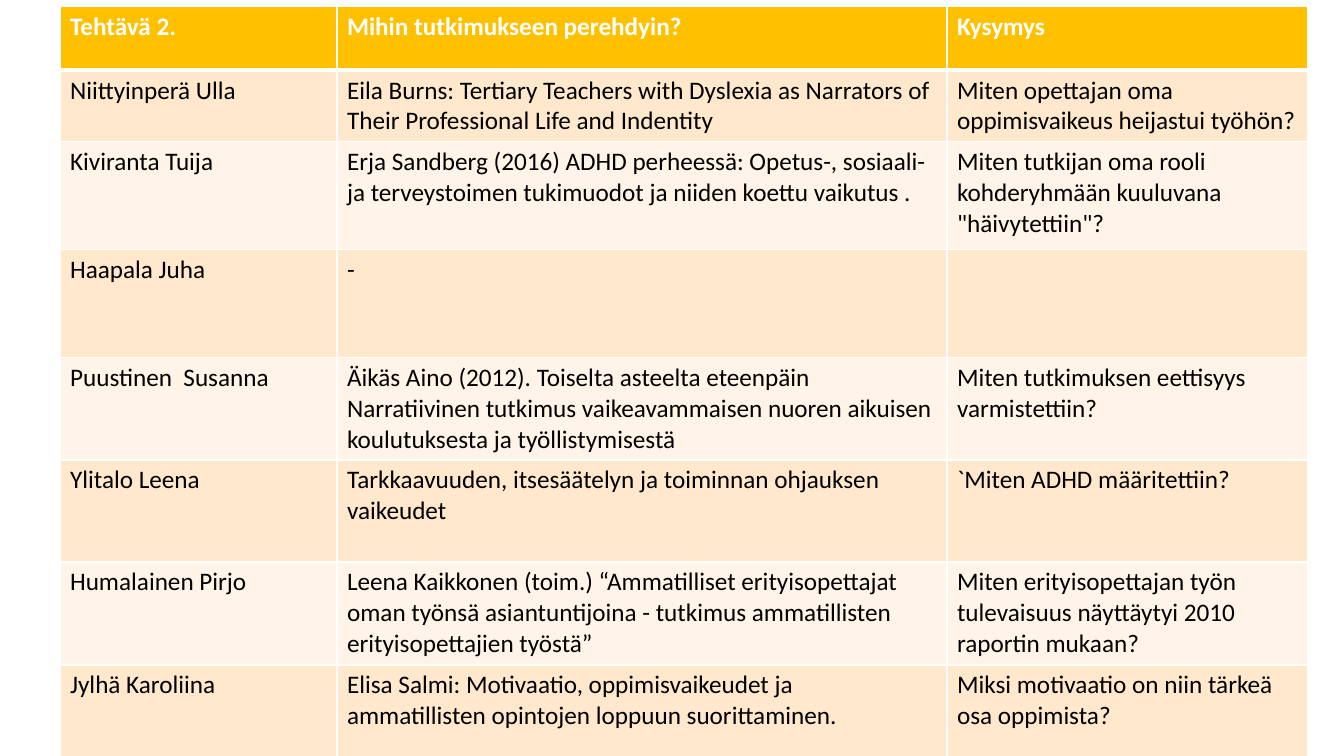
"""Build the slide listing each participant's chosen study and question."""
from dataclasses import dataclass

from lxml.etree import SubElement
from pptx import Presentation
from pptx.dml.color import RGBColor
from pptx.oxml.ns import qn
from pptx.util import Pt

ROWS = [
    ("Tehtävä 2.", "Mihin tutkimukseen perehdyin?", "Kysymys"),
    ("Niittyinperä Ulla",
     "Eila Burns: Tertiary Teachers with Dyslexia as Narrators of Their Professional Life and Indentity",
     "Miten opettajan oma oppimisvaikeus heijastui työhön?"),
    ("Kiviranta Tuija",
     "Erja Sandberg (2016) ADHD perheessä: Opetus-, sosiaali- ja terveystoimen tukimuodot "
     "ja niiden koettu vaikutus .",
     'Miten tutkijan oma rooli kohderyhmään kuuluvana "häivytettiin"?'),
    ("Haapala Juha", "-", ""),
    ("Puustinen  Susanna",
     "Äikäs Aino (2012). Toiselta asteelta eteenpäin Narratiivinen tutkimus "
     "vaikeavammaisen nuoren aikuisen koulutuksesta ja työllistymisestä",
     "Miten tutkimuksen eettisyys varmistettiin?"),
    ("Ylitalo Leena",
     "Tarkkaavuuden, itsesäätelyn ja toiminnan ohjauksen vaikeudet",
     "`Miten ADHD määritettiin?"),
    ("Humalainen Pirjo",
     "Leena Kaikkonen (toim.) “Ammatilliset erityisopettajat oman työnsä asiantuntijoina "
     "- tutkimus ammatillisten erityisopettajien työstä”",
     "Miten erityisopettajan työn tulevaisuus näyttäytyi 2010 raportin mukaan?"),
    ("Jylhä Karoliina",
     "Elisa Salmi: Motivaatio, oppimisvaikeudet ja ammatillisten opintojen loppuun suorittaminen.",
     "Miksi motivaatio on niin tärkeä osa oppimista?"),
]
COLUMN_WIDTHS = (277, 610, 361)
ROW_HEIGHTS = (64, 71, 108, 108, 102, 102, 103, 103)
TABLE_LEFT, TABLE_TOP = 60, 6
PAGE_WIDTH, PAGE_HEIGHT = 1344, 756


@dataclass(frozen=True)
class Theme:
    header: str = "FFC000"
    bands: tuple = ("FFF4E7", "FFE8CC")
    header_text: str = "FFFFFF"
    body_text: str = "000000"
    border: str = "FFFFFF"
    font: str = "Calibri"
    size: int = 18
    thin: int = 1
    thick: int = 3


THEME = Theme()


def px(length):
    return round(length * 914400 / 100.8)


def draw_borders(cell, top, bottom):
    properties = cell._tc.get_or_add_tcPr()
    for side, points in zip("LRTB", (THEME.thin, THEME.thin, top, bottom)):
        line = SubElement(properties, qn(f"a:ln{side}"), w=str(Pt(points)))
        fill = SubElement(line, qn("a:solidFill"))
        SubElement(fill, qn("a:srgbClr"), val=THEME.border)


def fill_cell(cell, text, row):
    is_header = row == 0
    draw_borders(cell,
                 THEME.thick if row == 1 else THEME.thin,
                 THEME.thick if is_header else THEME.thin)
    cell.fill.solid()
    cell.fill.fore_color.rgb = RGBColor.from_string(
        THEME.header if is_header else THEME.bands[row % 2])
    cell.text = text
    font = cell.text_frame.paragraphs[0].font
    font.name, font.size, font.bold = THEME.font, Pt(THEME.size), is_header
    font.color.rgb = RGBColor.from_string(
        THEME.header_text if is_header else THEME.body_text)


def main():
    deck = Presentation()
    deck.slide_width, deck.slide_height = px(PAGE_WIDTH), px(PAGE_HEIGHT)
    page = deck.slides.add_slide(deck.slide_layouts[6])
    table = page.shapes.add_table(
        len(ROWS), len(COLUMN_WIDTHS), px(TABLE_LEFT), px(TABLE_TOP),
        px(sum(COLUMN_WIDTHS)), px(sum(ROW_HEIGHTS))).table
    for column, width in zip(table.columns, COLUMN_WIDTHS):
        column.width = px(width)
    for row, (height, texts) in enumerate(zip(ROW_HEIGHTS, ROWS)):
        table.rows[row].height = px(height)
        for column, text in enumerate(texts):
            fill_cell(table.cell(row, column), text, row)
    deck.save("out.pptx")


if __name__ == "__main__":
    main()
